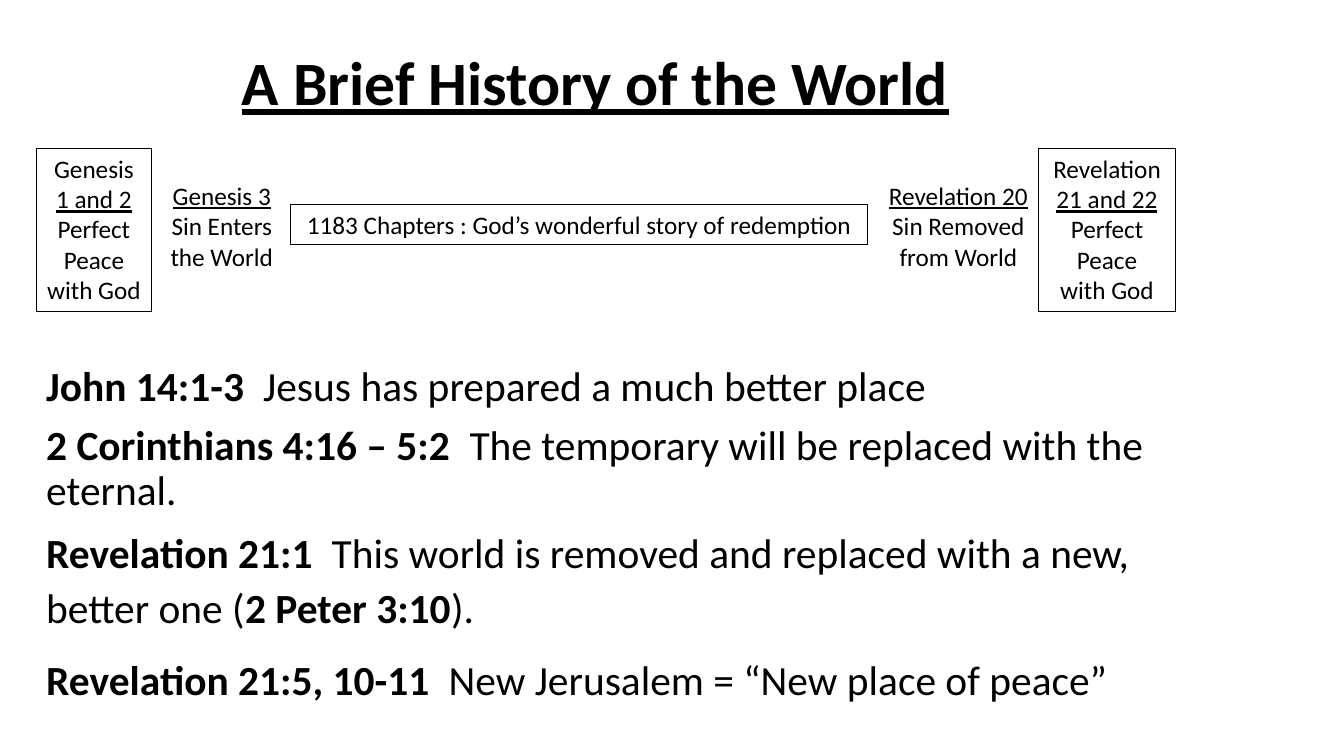
from pptx import Presentation
from pptx.dml.color import RGBColor
from pptx.enum.shapes import MSO_SHAPE
from pptx.enum.text import MSO_ANCHOR, PP_ALIGN
from pptx.util import Inches, Pt

RECTANGLE = MSO_SHAPE.RECTANGLE
TOP, MIDDLE = MSO_ANCHOR.TOP, MSO_ANCHOR.MIDDLE
LEFT, CENTER = PP_ALIGN.LEFT, PP_ALIGN.CENTER

COLORS = {"ink": "000000", "paper": "FFFFFF"}
TITLE_ONLY = 5


class SlideBuilder:
    """Places styled elements; every area is (left, top, width, height) in % of the slide."""

    font = "Calibri"
    title_size, label_size, verse_size = 44, 18, 29.6

    def __init__(self, deck):
        self.deck = deck
        self.slide = deck.slides.add_slide(deck.slide_layouts[TITLE_ONLY])
        fill = self.slide.background.fill
        fill.solid()
        fill.fore_color.rgb = self.color("paper")

    def color(self, name):
        return RGBColor.from_string(COLORS[name])

    def place(self, area):
        sides = (self.deck.slide_width, self.deck.slide_height) * 2
        return [round(share * side / 100) for share, side in zip(area, sides)]

    def style(self, paragraph, size, align):
        paragraph.alignment = align
        paragraph.font.name = self.font
        paragraph.font.size = Pt(size)
        paragraph.font.color.rgb = self.color("ink")

    def title(self, area, text):
        heading = self.slide.shapes.title
        heading.left, heading.top, heading.width, heading.height = self.place(area)
        heading.text_frame.text = text
        heading.text_frame.vertical_anchor = MIDDLE
        paragraph = heading.text_frame.paragraphs[0]
        self.style(paragraph, self.title_size, CENTER)
        paragraph.line_spacing = 0.9
        paragraph.font.bold = paragraph.font.underline = True

    def fill_text(self, frame, paragraphs, size, align, bold=False):
        """Fill a frame with (text, marked) runs; marked runs are bold or else underlined."""
        frame.word_wrap = True
        for index, runs in enumerate(paragraphs):
            paragraph = frame.paragraphs[0] if index == 0 else frame.add_paragraph()
            self.style(paragraph, size, align)
            for text, marked in runs:
                run = paragraph.add_run()
                run.text = text
                if marked and bold:
                    run.font.bold = True
                elif marked:
                    run.font.underline = True

    def label(self, area, paragraphs):
        frame = self.slide.shapes.add_textbox(*self.place(area)).text_frame
        self.fill_text(frame, paragraphs, self.label_size, CENTER)

    def framed_label(self, area, paragraphs):
        box = self.slide.shapes.add_shape(RECTANGLE, *self.place(area))
        box.shadow.inherit = False
        box.fill.background()
        box.line.color.rgb = self.color("ink")
        box.line.width = Pt(0.75)
        box.text_frame.vertical_anchor = TOP
        self.fill_text(box.text_frame, paragraphs, self.label_size, CENTER)

    def verses(self, area, entries):
        frame = self.slide.shapes.add_textbox(*self.place(area)).text_frame
        self.fill_text(frame, [runs for runs, _ in entries], self.verse_size, LEFT, bold=True)
        for paragraph, (_, spacing) in zip(frame.paragraphs, entries):
            paragraph.line_spacing, before, after = spacing
            paragraph.space_before, paragraph.space_after = Pt(before), Pt(after)


def main():
    deck = Presentation()
    deck.slide_width, deck.slide_height = Inches(13.33), Inches(7.5)
    history = SlideBuilder(deck)
    history.title((11.33, 3.07, 65.94, 16.53), "A Brief History of the World")

    # Verses: line spacing, points before, points after
    tight, loose = (0.9, 10, 0), (1.1, 6, 6)
    history.verses((2.7, 47.73, 84.4, 52.27), [
        ([("John 14:1-3  ", True),
          ("Jesus has prepared a much better place", False)], tight),
        ([("2 Corinthians 4:16 – 5:2  ", True),
          ("The temporary will be replaced with the eternal.", False)], tight),
        ([("Revelation 21:1  ", True),
          ("This world is removed and replaced with a new, better one (", False),
          ("2 Peter 3:10", True), (").", False)], loose),
        ([("Revelation 21:5, 10-11  ", True),
          ("New Jerusalem = “New place of peace”", False)], loose),
    ])

    # Timeline: peace at both ends, sin entering and leaving, redemption between
    peace_row, sin_row, redemption_row = (19.6, 21.6), (23.2, 13.47), (27.07, 5.33)

    def span(left, width, row):
        return left, row[0], width, row[1]

    history.framed_label(span(2.7, 8.58, peace_row), [
        [("Genesis ", False), ("1 and 2", True)],
        [("Perfect Peace with God", False)],
    ])
    history.framed_label(span(77.27, 10.2, peace_row), [
        [("Revelation ", False), ("21 and 22", True)],
        [("Perfect Peace", False)],
        [("with God", False)],
    ])
    history.label(span(11.33, 10.35, sin_row), [
        [("Genesis 3", True)], [("Sin Enters the World", False)],
    ])
    history.label(span(65.34, 11.93, sin_row), [
        [("Revelation 20", True)], [("Sin Removed from World", False)],
    ])
    history.framed_label(span(21.6, 42.98, redemption_row), [
        [("1183 Chapters : God’s wonderful story of redemption", False)],
    ])

    deck.save("out.pptx")


if __name__ == "__main__":
    main()
